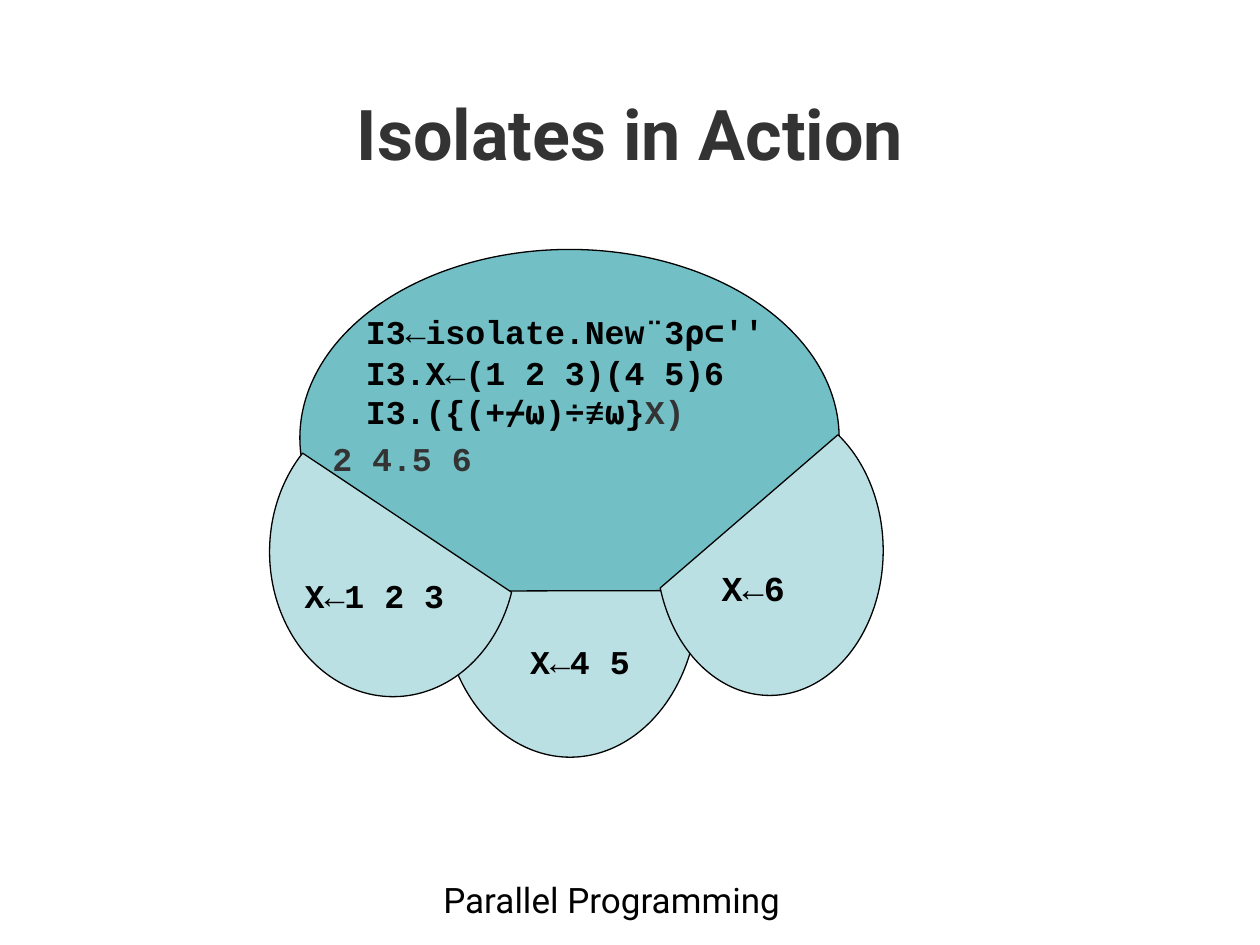
from pptx import Presentation
from pptx.dml.color import RGBColor
from pptx.enum.shapes import MSO_SHAPE
from pptx.enum.text import MSO_ANCHOR, MSO_AUTO_SIZE, PP_ALIGN
from pptx.util import Inches, Pt

ELLIPSE, CHORD = MSO_SHAPE.OVAL, MSO_SHAPE.CHORD
TOP, CENTER = MSO_ANCHOR.TOP, PP_ALIGN.CENTER
GROW = MSO_AUTO_SIZE.SHAPE_TO_FIT_TEXT
COLORS = {"black": "000000", "gray": "333333", "teal": "72BFC5", "pale": "BBE0E3"}

prs = Presentation()
prs.slide_width, prs.slide_height = Inches(10), Inches(7.5)
slide = prs.slides.add_slide(prs.slide_layouts[5])


def style(run, font, size, color, bold):
    run.font.name = font
    run.font.size = Pt(size)
    run.font.bold = bold
    run.font.color.rgb = RGBColor.from_string(COLORS[color])


def add_bubble(kind, box, color):
    bubble = slide.shapes.add_shape(kind, *map(Inches, box))
    bubble.shadow.inherit = False
    bubble.fill.solid()
    bubble.fill.fore_color.rgb = RGBColor.from_string(COLORS[color])
    bubble.line.color.rgb = RGBColor.from_string(COLORS["black"])
    bubble.line.width = Pt(0.75)
    return bubble


# Title
title = slide.shapes.title
title.left, title.top = Inches(0.75), Inches(0.67)
title.width, title.height = Inches(8.5), Inches(1.25)
title.text_frame.text = "Isolates in Action"
title.text_frame.vertical_anchor = TOP
heading = title.text_frame.paragraphs[0]
heading.alignment = CENTER
style(heading.runs[0], "Roboto", 40, "gray", True)

# Main workspace, with the three isolates around its lower edge
add_bubble(ELLIPSE, (2.38, 1.98, 4.28, 2.99), "teal")
isolates = [
    ((3.51, 3.48, 2.03, 2.53), (214.19, 109.95), True),
    ((5.21, 3.22, 1.8, 2.3), (11.31, 143.7), True),
    ((2.14, 3.23, 1.96, 2.3), (11.31, 136.5), False),
]
for box, angles, mirrored in isolates:
    isolate = add_bubble(CHORD, box, "pale")
    for i, angle in enumerate(angles):
        isolate.adjustments[i] = angle
    if mirrored:
        isolate.element.spPr.xfrm.set("flipH", "1")

# Footer
footer = slide.shapes.add_textbox(Inches(3.42), Inches(6.92), Inches(3.17), Inches(0.5))
footer.text_frame.word_wrap = True
footer.text_frame.text = "Parallel Programming"
style(footer.text_frame.paragraphs[0].runs[0], "Roboto", 20, "black", False)

# Code: isolate contents, then the session lines
code_lines = [
    ((2.32, 4.52, 1.61, 0.42), 19, [("X←1 2 3", "black")]),
    ((4.11, 5.04, 1.29, 0.42), 19, [("X←4 5", "black")]),
    ((5.63, 4.45, 1.26, 0.44), 20, [("X←6", "black")]),
    ((2.49, 2.42, 4.6, 0.42), 19, [("  I3←isolate.New¨3⍴⊂''", "black")]),
    ((2.49, 3.06, 4.6, 0.42), 19, [("  I3.({(+⌿⍵)÷≢⍵}", "black"), ("X)", "gray")]),
    ((2.49, 2.75, 4.6, 0.42), 19, [("  I3.X←(1 2 3)(4 5)6", "black")]),
    ((2.54, 3.43, 4.6, 0.42), 19, [("2 4.5 6", "gray")]),
]
for box, size, pieces in code_lines:
    code = slide.shapes.add_textbox(*map(Inches, box)).text_frame
    code.word_wrap = True
    code.auto_size = GROW
    for text, color in pieces:
        run = code.paragraphs[0].add_run()
        run.text = text
        style(run, "Courier New", size, color, True)

prs.save("out.pptx")
